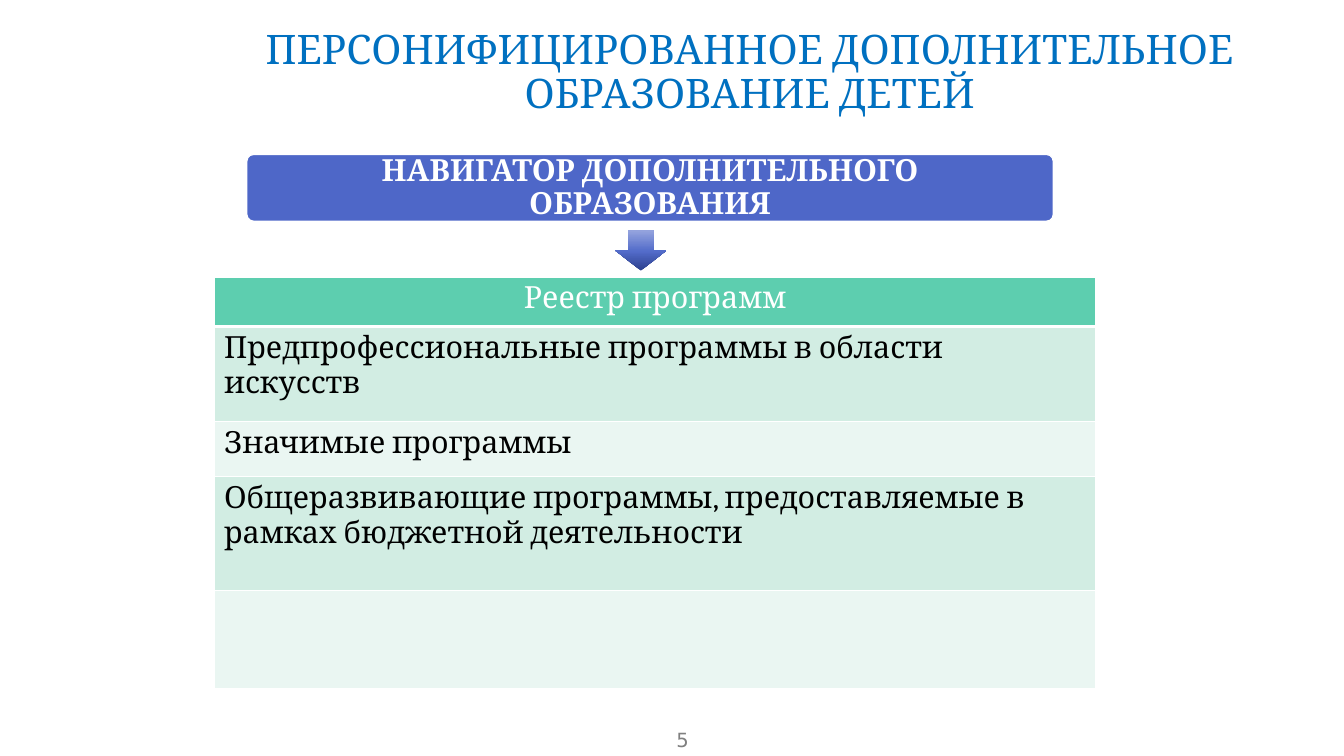
from copy import deepcopy
from dataclasses import dataclass

from lxml.etree import SubElement
from pptx import Presentation
from pptx.dml.color import RGBColor
from pptx.enum.shapes import MSO_SHAPE as Shape
from pptx.enum.text import MSO_ANCHOR as Anchor, MSO_AUTO_SIZE as AutoSize, PP_ALIGN as Align
from pptx.oxml.ns import qn
from pptx.util import Inches, Pt


# Colours, fonts and type sizes
@dataclass(frozen=True)
class Theme:
    font: str = "Cambria"
    number_font: str = "DejaVu Sans"
    title_size: float = 32
    text_size: float = 24
    number_size: float = 15.4
    title: str = "0070C0"
    banner: str = "4E67C8"
    header: str = "5DCEAF"
    band_dark: str = "D2EDE3"
    band_light: str = "EAF6F2"
    white: str = "FFFFFF"
    black: str = "000000"
    grey: str = "808080"
    arrow: tuple = ((0, "2C408E"), (0.48, "536CCA"), (1, "95A4DE"))


@dataclass(frozen=True)
class TableRow:
    text: str
    height: float
    fill: str
    color: str = "000000"
    align: Align = Align.LEFT


THEME = Theme()
TITLE = ("ПЕРСОНИФИЦИРОВАННОЕ ДОПОЛНИТЕЛЬНОЕ", "ОБРАЗОВАНИЕ ДЕТЕЙ")
ROWS = (
    TableRow("Реестр программ", 0.54, THEME.header, THEME.white, Align.CENTER),
    TableRow("Предпрофессиональные программы в области искусств", 1.04, THEME.band_dark),
    TableRow("Значимые программы", 0.6, THEME.band_light),
    TableRow("Общеразвивающие программы, предоставляемые в рамках бюджетной деятельности",
             1.25, THEME.band_dark),
    TableRow("", 1.07, THEME.band_light),
)


def rgb(value: str) -> RGBColor:
    return RGBColor.from_string(value)


def inches(*values: float) -> list:
    return [Inches(value) for value in values]


def set_margins(frame, margin: float) -> None:
    frame.margin_left = frame.margin_right = Inches(margin)
    frame.margin_top = frame.margin_bottom = Inches(margin)


def write(frame, lines, size: float, color: str, align=Align.CENTER,
          font: str = THEME.font, bold: bool = False, spacing: float = 1.0) -> None:
    for index, line in enumerate(lines):
        para = frame.paragraphs[0] if index == 0 else frame.add_paragraph()
        para.alignment, para.line_spacing = align, spacing
        para.space_before = Pt(0)
        span = para.add_run()
        span.text = line
        span.font.name, span.font.size, span.font.bold = font, Pt(size), bold
        span.font.color.rgb = rgb(color)


def set_borders(cell, is_header: bool, below_header: bool) -> None:
    for side in "LRTB":
        thick = (is_header and side == "B") or (below_header and side == "T")
        border = SubElement(cell._tc.get_or_add_tcPr(), qn(f"a:ln{side}"),
                            w=str(Pt(3 if thick else 1)))
        fill = SubElement(border, qn("a:solidFill"))
        SubElement(fill, qn("a:srgbClr"), val=THEME.white)


def add_title(page) -> None:
    title = page.shapes.title
    title.left, title.top, title.width, title.height = inches(1.7, 0.32, 13, 0.81)
    frame = title.text_frame
    frame.auto_size, frame.word_wrap = AutoSize.NONE, True
    frame.vertical_anchor = Anchor.TOP
    set_margins(frame, 0)
    write(frame, TITLE, THEME.title_size, THEME.title, spacing=0.9)


def add_banner(page) -> None:
    banner = page.shapes.add_shape(Shape.ROUNDED_RECTANGLE, *inches(2.7, 1.69, 8.82, 0.73))
    banner.shadow.inherit = False
    banner.adjustments[0] = 0.1
    banner.fill.solid()
    banner.fill.fore_color.rgb = rgb(THEME.banner)
    banner.line.color.rgb = rgb(THEME.white)
    banner.line.width = Pt(1)
    frame = banner.text_frame
    frame.word_wrap, frame.vertical_anchor = True, Anchor.MIDDLE
    set_margins(frame, 0.15)
    write(frame, ["НАВИГАТОР ДОПОЛНИТЕЛЬНОГО ОБРАЗОВАНИЯ"], THEME.text_size,
          THEME.white, bold=True, spacing=0.9)


def add_arrow(page) -> None:
    arrow = page.shapes.add_shape(Shape.DOWN_ARROW, *inches(6.73, 2.52, 0.56, 0.44))
    arrow.shadow.inherit = False
    arrow.line.fill.background()
    arrow.fill.gradient()
    arrow.fill.gradient_angle = 90
    # The default gradient has two stops; a third is needed
    stop_list = next(arrow._element.spPr.iter(qn("a:gsLst")))
    stop_list.insert(1, deepcopy(stop_list[0]))
    for stop, (position, color) in zip(arrow.fill.gradient_stops, THEME.arrow):
        stop.position = position
        stop.color.rgb = rgb(color)


def add_programs(page) -> None:
    height = sum(row.height for row in ROWS)
    table = page.shapes.add_table(len(ROWS), 1, *inches(2.35, 3.03, 9.63, height)).table
    for index, row in enumerate(ROWS):
        table.rows[index].height = Inches(row.height)
        cell = table.cell(index, 0)
        set_borders(cell, index == 0, index == 1)
        cell.fill.solid()
        cell.fill.fore_color.rgb = rgb(row.fill)
        if row.text:
            write(cell.text_frame, [row.text], THEME.text_size, row.color, row.align)


def add_page_number(page) -> None:
    box = page.shapes.add_textbox(*inches(7.13, 7.96, 0.67, 0.31))
    box.text_frame.word_wrap = True
    set_margins(box.text_frame, 0)
    write(box.text_frame, ["5"], THEME.number_size, THEME.grey, font=THEME.number_font)


def main() -> None:
    deck = Presentation()
    deck.slide_width, deck.slide_height = inches(14.7, 8.27)
    page = deck.slides.add_slide(deck.slide_layouts[5])
    add_title(page)
    add_programs(page)
    add_banner(page)
    add_arrow(page)
    add_page_number(page)
    deck.save("out.pptx")


if __name__ == "__main__":
    main()
